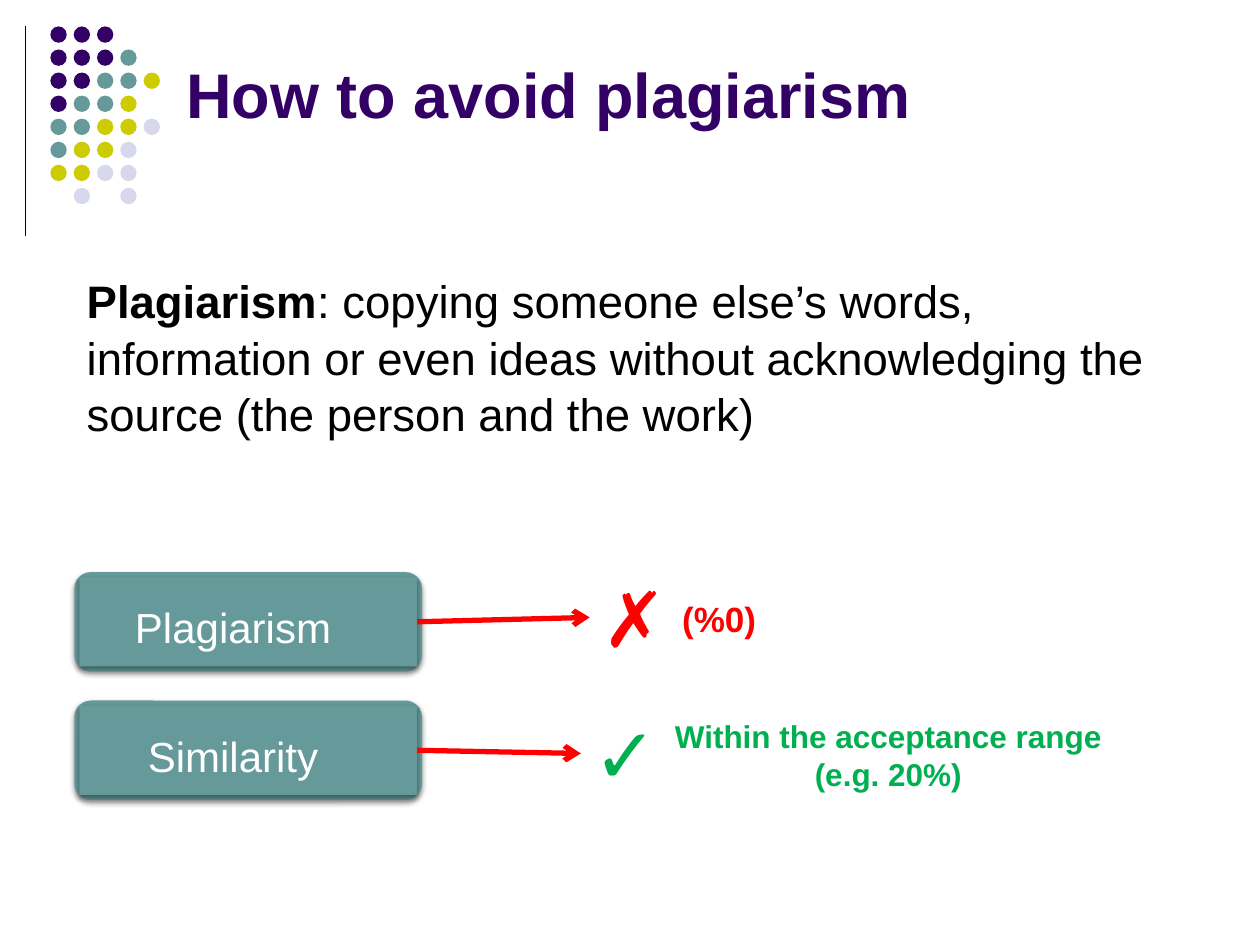
from lxml import etree
from pptx import Presentation
from pptx import util as u
from pptx.dml.color import RGBColor
from pptx.enum import shapes, text
from pptx.oxml import ns

BLACK = RGBColor(0x00, 0x00, 0x00)
WHITE = RGBColor(0xFF, 0xFF, 0xFF)
PURPLE = RGBColor(0x33, 0x00, 0x66)
TEAL = RGBColor(0x66, 0x99, 0x99)
OLIVE = RGBColor(0xCC, 0xCC, 0x00)
LAVENDER = RGBColor(0xD8, 0xD8, 0xEC)
RED = RGBColor(0xFF, 0x00, 0x00)
GREEN = RGBColor(0x00, 0xB0, 0x50)

LEFT, CENTER, RIGHT = text.PP_ALIGN.LEFT, text.PP_ALIGN.CENTER, text.PP_ALIGN.RIGHT
DOT_COLORS = {"P": PURPLE, "T": TEAL, "O": OLIVE, "L": LAVENDER}
DOT_ROWS = ["PPP", "PPPT", "PPTTO", "PTTO", "TTOOL", "TOOL", "OOLL", " L L"]
DOT_SIZE, DOT_PITCH = 0.13, 0.18
ROW_TOP, ROW_PITCH = 4.54, 1.02


def inches(*lengths):
    return [u.Inches(n) for n in lengths]


def write(tf, *parts, size, color, bold=True, align=LEFT, spacing=1.0):
    tf.word_wrap = True
    p = tf.paragraphs[0]
    p.alignment = align
    p.line_spacing = spacing
    for i, part in enumerate(parts):
        r = p.add_run()
        r.text = part
        r.font.name = "Arial"
        r.font.size = u.Pt(size)
        r.font.bold = bold and i == 0
        r.font.color.rgb = color


def add_text(s, box, *parts, **fmt):
    sp = s.shapes.add_textbox(*inches(*box))
    write(sp.text_frame, *parts, **fmt)
    return sp


def add_filled(owner, kind, box, color):
    sp = owner.shapes.add_shape(kind, *inches(*box))
    sp.shadow.inherit = False
    sp.fill.solid()
    sp.fill.fore_color.rgb = color
    sp.line.fill.background()
    return sp


def add_shadow(sp):
    effects = sp._element.spPr.find(ns.qn("a:effectLst"))
    shadow = etree.SubElement(effects, ns.qn("a:outerShdw"), blurRad=str(u.Pt(3.1)),
                              dist=str(u.Pt(1.6)), dir="5400000", rotWithShape="0")
    color = etree.SubElement(shadow, ns.qn("a:srgbClr"), val=str(BLACK))
    etree.SubElement(color, ns.qn("a:alpha"), val="38000")


def add_line(s, start, end, color, width):
    line = s.shapes.add_connector(shapes.MSO_CONNECTOR.STRAIGHT, *inches(*start, *end))
    line.line.color.rgb = color
    line.line.width = u.Pt(width)
    etree.SubElement(line._element.spPr, ns.qn("a:effectLst"))
    return line


def add_arrow(s, source, target):
    line = add_line(s, (0, 0), (1, 1), RED, 3)
    line.begin_connect(source, 3)
    line.end_connect(target, 1)
    etree.SubElement(line.line._get_or_add_ln(), ns.qn("a:tailEnd"), type="arrow")


def add_dots(s):
    grp = s.shapes.add_group_shape()
    for row, codes in enumerate(DOT_ROWS):
        for col, code in enumerate(codes):
            if code in DOT_COLORS:
                box = (0.4 + col * 0.185, 0.21 + row * 0.183, DOT_SIZE, DOT_SIZE)
                add_filled(grp, shapes.MSO_SHAPE.OVAL, box, DOT_COLORS[code])


def add_label(s, row, label):
    top = ROW_TOP + row * ROW_PITCH
    grp = s.shapes.add_group_shape()
    outer = add_filled(grp, shapes.MSO_SHAPE.ROUNDED_RECTANGLE, (0.59, top, 2.76, 0.79), TEAL)
    inner = add_filled(grp, shapes.MSO_SHAPE.RECTANGLE, (0.63, top + 0.04, 2.68, 0.71), TEAL)
    for sp in (outer, inner):
        add_shadow(sp)
    tf = inner.text_frame
    tf.margin_left = tf.margin_top = tf.margin_bottom = u.Inches(0.1)
    tf.margin_right = u.Inches(0.34)
    tf.vertical_anchor = text.MSO_ANCHOR.MIDDLE
    write(tf, label, size=24, color=WHITE, bold=False, align=CENTER, spacing=1.2)
    return inner


def add_title(s, title):
    sp = s.shapes.title
    sp.left, sp.top, sp.width, sp.height = inches(1.38, 0.14, 8.12, 0.95)
    sp.text_frame.vertical_anchor = text.MSO_ANCHOR.BOTTOM
    write(sp.text_frame, title, size=36, color=PURPLE)


def main():
    prs = Presentation()
    prs.slide_width, prs.slide_height = inches(10, 7.5)
    s = prs.slides.add_slide(prs.slide_layouts[5])

    add_line(s, (0.2, 0.21), (0.2, 1.87), BLACK, 0.75)
    add_dots(s)
    add_title(s, "How to avoid plagiarism")
    add_text(s, (0.59, 2.1, 9.06, 1.4), "Plagiarism",
             ": copying someone else’s words, information or even ideas without "
             "acknowledging the source (the person and the work)",
             size=26, color=BLACK, spacing=1.04)

    plagiarism = add_label(s, 0, "Plagiarism")
    similarity = add_label(s, 1, "Similarity")
    cross = add_text(s, (4.68, 4.48, 0.71, 0.84), "✗", size=44, color=RED, align=CENTER)
    check = add_text(s, (4.61, 5.56, 0.71, 0.84), "✓", size=44, color=GREEN, align=RIGHT)
    add_arrow(s, plagiarism, cross)
    add_arrow(s, similarity, check)
    add_text(s, (5.16, 5.64, 3.78, 0.71), "Within the acceptance range (e.g. 20%)",
             size=18, color=GREEN, align=CENTER)
    add_text(s, (5.24, 4.69, 0.86, 0.44), "(%0)", size=20, color=RED, align=RIGHT)

    prs.save("out.pptx")


if __name__ == "__main__":
    main()
